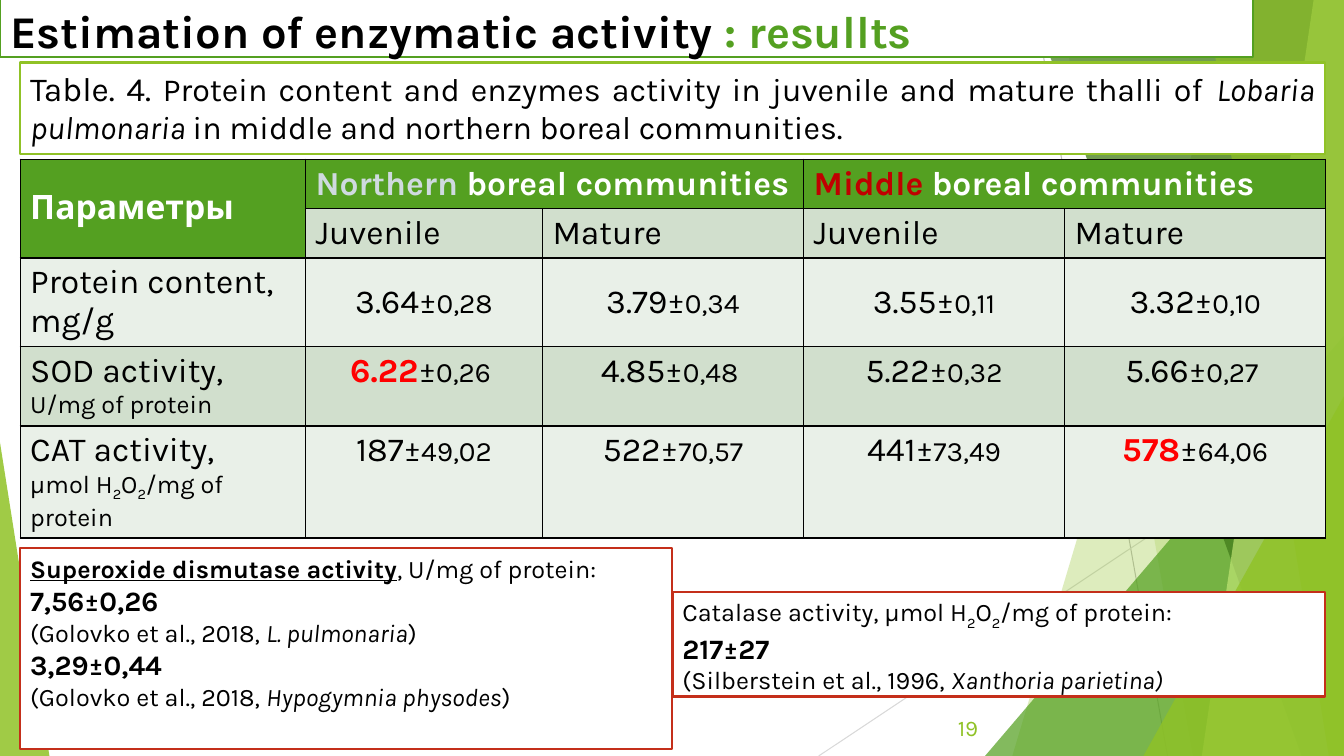
from pptx import Presentation
from pptx.dml.color import RGBColor
from pptx.enum.shapes import MSO_CONNECTOR, MSO_SHAPE
from pptx.enum.text import MSO_ANCHOR, MSO_AUTO_SIZE, PP_ALIGN
from pptx.oxml import parse_xml
from pptx.oxml.ns import nsdecls, qn
from pptx.oxml.xmlchemy import OxmlElement
from pptx.util import Inches, Pt

RECT, TRIANGLE = MSO_SHAPE.RECTANGLE, MSO_SHAPE.ISOSCELES_TRIANGLE
STRAIGHT, NO_FIT = MSO_CONNECTOR.STRAIGHT, MSO_AUTO_SIZE.NONE
TOP, MIDDLE = MSO_ANCHOR.TOP, MSO_ANCHOR.MIDDLE
LEFT, CENTER = PP_ALIGN.LEFT, PP_ALIGN.CENTER
RIGHT, JUSTIFY = PP_ALIGN.RIGHT, PP_ALIGN.JUSTIFY

BLACK, WHITE = RGBColor(0, 0, 0), RGBColor(255, 255, 255)
LIME, GREEN = RGBColor(0x90, 0xC2, 0x26), RGBColor(0x54, 0xA0, 0x21)
DARK, PALE = RGBColor(0x3F, 0x78, 0x19), RGBColor(0xC0, 0xE4, 0x74)
SAGE, MIST = RGBColor(0xD1, 0xDF, 0xCD), RGBColor(0xE9, 0xF0, 0xE8)
RED, WINE = RGBColor(255, 0, 0), RGBColor(0xC0, 0, 0)
BRICK, STEEL = RGBColor(0xC4, 0x2F, 0x1A), RGBColor(0xCF, 0xDA, 0xDF)
GREY, SILVER = RGBColor(0xBF, 0xBF, 0xBF), RGBColor(0xD9, 0xD9, 0xD9)
FONT = "Karla"
WIDE, HIGH = 13.33, 7.5
EDGE, SPAN = 0.2, 12.94

# A run is (text, size, style letters, colour); s stands for subscript.
PEROXIDE = [("2", 18, "s"), ("O", 18), ("2", 18, "s")]
TITLE = [[("Estimation of enzymatic activity ", 32.4, "b"), (": resullts", 32.4, "b", GREEN)]]
CAPTION = [[
    ("Table. 4. ", 24),
    ("Protein content and enzymes activity in juvenile and mature thalli of ", 23),
    ("Lobaria pulmonaria ", 23, "i"),
    ("in middle and northern boreal communities.", 23),
]]
DISMUTASE = [
    [("Superoxide dismutase activity", 18, "bu"), (", U/mg of protein:", 18)],
    [("7,56±0,26", 20, "b")],
    [("(Golovko et al., 2018, ", 18), ("L. pulmonaria", 18, "i"), (")", 18)],
    [("3,29±0,44", 20, "b")],
    [("(Golovko et al., 2018, ", 18), ("Hypogymnia physodes", 18, "i"), (")", 18)],
]
CATALASE = [
    [("Catalase activity, µmol H", 18), *PEROXIDE, ("/mg of protein:", 18)],
    [("217±27", 20, "b")],
    [("(Silberstein et al., 1996, ", 18), ("Xanthoria parietina)", 18, "i")],
]
CORNER = "Параметры"
ZONES = [("Northern", STEEL), ("Middle", WINE)]
AGES = ["Juvenile", "Mature"]
LABELS = [
    [[("Protein content, mg/g", 24)]],
    [[("SOD activity,", 24)], [("U/mg of protein", 18)]],
    [[("CAT activity,", 24)], [("µmol H", 18), *PEROXIDE, ("/mg of protein", 18)]],
]
VALUES = [
    [("3.64", "0,28"), ("3.79", "0,34"), ("3.55", "0,11"), ("3.32", "0,10")],
    [("6.22", "0,26 "), ("4.85", "0,48 "), ("5.22", "0,32"), ("5.66", "0,27 ")],
    [("187", "49,02"), ("522", "70,57"), ("441", "73,49"), ("578", "64,06")],
]
PEAKS = {"6.22", "578"}
COLS = [2.83, 2.35, 2.59, 2.59, 2.59]
ROWS = [0.49, 0.49, 0.87, 0.79, 1.11]

RAYS = [((10.25, 0), (11.58, HIGH), GREY), ((WIDE, 4.03), (8.12, HIGH), SILVER)]
# Each blade runs to the right edge: top x, bottom x, colour, opacity.
# Each wedge: left, top, width, apex, colour, opacity.
FACETS = [
    ("blade", (12.28, 10.04), LIME, 30),
    ("blade", (10.5, 11.83), LIME, 20),
    ("wedge", (9.77, 3.33, 3.56, 1), GREEN, 72),
    ("blade", (10.21, 12.91), DARK, 70),
    ("blade", (13.03, 11.92), PALE, 70),
    ("blade", (11.96, 13.18), LIME, 65),
    ("wedge", (11.34, 3.93, 1.99, 1), LIME, 80),
    ("wedge", (0, 4.39, 0.49, 0), LIME, 85),
]


def write(frame, paras, align=LEFT):
    for n, runs in enumerate(paras):
        para = frame.add_paragraph() if n else frame.paragraphs[0]
        para.alignment = align
        para.font.name = FONT
        for text, size, *rest in runs:
            style, color = (rest + ["", BLACK][len(rest):])
            run = para.add_run()
            run.text = text
            font = run.font
            font.name, font.size = FONT, Pt(size)
            font.bold, font.italic = "b" in style, "i" in style
            font.underline = "u" in style
            font.color.rgb = color
            if "s" in style:
                run._r.get_or_add_rPr().set("baseline", "-25000")


def paint(shape, fill, line=None):
    shape.fill.solid()
    shape.fill.fore_color.rgb = fill
    if line is None:
        shape.line.fill.background()
    else:
        shape.line.color.rgb = line
        shape.line.width = Pt(1.5)


def place(shape, *box):
    shape.left, shape.top, shape.width, shape.height = map(Inches, box)


def panel(shapes, box, line, paras, align=LEFT):
    shape = shapes.add_shape(RECT, *map(Inches, box))
    shape.shadow.inherit = False
    paint(shape, WHITE, line)
    shape.text_frame.word_wrap = True
    shape.text_frame.vertical_anchor = TOP
    write(shape.text_frame, paras, align)


def facet(shapes, kind, spots, color, alpha):
    if kind == "blade":
        top, base = spots
        path = shapes.build_freeform(Inches(top), Inches(-0.01))
        path.add_line_segments(
            [(Inches(x), Inches(y)) for x, y in [(WIDE, -0.01), (WIDE, HIGH), (base, HIGH)]])
        shape = path.convert_to_shape()
    else:
        left, top, width, apex = spots
        shape = shapes.add_shape(TRIANGLE, *map(Inches, (left, top, width, HIGH - top)))
        shape.adjustments[0] = apex
    shape.shadow.inherit = False
    paint(shape, color)
    clear = OxmlElement("a:alpha")
    clear.set("val", str(alpha * 1000))
    next(shape.element.iter(qn("a:srgbClr"))).append(clear)


def ray(shapes, start, end, color):
    line = shapes.add_connector(STRAIGHT, *map(Inches, start + end))
    line.line.color.rgb = color
    line.line.width = Pt(0.75)
    line.element.spPr.append(OxmlElement("a:effectLst"))


def frame_cell(cell):
    """Draw a thin black border on all four sides."""
    props = cell._tc.get_or_add_tcPr()
    for n, side in enumerate(("lnL", "lnR", "lnT", "lnB")):
        props.insert(n, parse_xml(
            f'<a:{side} {nsdecls("a")} w="12700"><a:solidFill>'
            f'<a:srgbClr val="000000"/></a:solidFill></a:{side}>'))


def results(shapes):
    box = map(Inches, (EDGE, 1.58, SPAN, sum(ROWS)))
    table = shapes.add_table(len(ROWS), len(COLS), *box).table
    table.first_row = table.horz_banding = False
    for col, width in zip(table.columns, COLS):
        col.width = Inches(width)
    for row, height in zip(table.rows, ROWS):
        row.height = Inches(height)
    for r in range(len(ROWS)):
        for c in range(len(COLS)):
            cell = table.cell(r, c)
            cell.fill.solid()
            head = r == 0 or (r == 1 and c == 0)
            cell.fill.fore_color.rgb = GREEN if head else SAGE if r % 2 else MIST
            frame_cell(cell)
    corner = table.cell(0, 0)
    corner.merge(table.cell(1, 0))
    corner.vertical_anchor = MIDDLE
    write(corner.text_frame, [[(CORNER, 24, "b", WHITE)]], JUSTIFY)
    for z, (zone, color) in enumerate(ZONES):
        c = 1 + z * len(AGES)
        table.cell(0, c).merge(table.cell(0, c + 1))
        write(table.cell(0, c).text_frame,
              [[(zone, 24, "b", color), (" boreal communities", 24, "b", WHITE)]])
        for a, age in enumerate(AGES):
            write(table.cell(1, c + a).text_frame, [[(age, 24)]])
    for r, (label, row) in enumerate(zip(LABELS, VALUES), 2):
        write(table.cell(r, 0).text_frame, label)
        for c, (mean, error) in enumerate(row, 1):
            cell = table.cell(r, c)
            cell.vertical_anchor = MIDDLE if r == 2 else TOP
            look = ("b", RED) if mean in PEAKS else ()
            write(cell.text_frame, [[(mean, 24, *look), ("±", 24), (error, 20)]], CENTER)


def main():
    deck = Presentation()
    deck.slide_width, deck.slide_height = Inches(WIDE), Inches(HIGH)
    slide = deck.slides.add_slide(deck.slide_layouts[5])
    shapes = slide.shapes
    for item in RAYS:
        ray(shapes, *item)
    for item in FACETS:
        facet(shapes, *item)
    results(shapes)
    half = SPAN / 2
    panel(shapes, (EDGE, 0.62, SPAN, 0.91), LIME, CAPTION, JUSTIFY)
    panel(shapes, (EDGE, 5.44, half, 1.99), BRICK, DISMUTASE)
    panel(shapes, (EDGE + half, 5.87, half, 1.04), BRICK, CATALASE)
    number = shapes.add_textbox(*map(Inches, (9.05, 7.02, 0.75, 0.4))).text_frame
    number.word_wrap = True
    number.vertical_anchor = MIDDLE
    write(number, [[("19", 16, "", LIME)]], RIGHT)
    title = shapes.title
    place(title, 0, -0.02, 12.43, 0.59)
    paint(title, WHITE, GREEN)
    title.text_frame.auto_size = NO_FIT
    title.text_frame.vertical_anchor = TOP
    write(title.text_frame, TITLE)
    title.element.getparent().append(title.element)
    deck.save("out.pptx")


if __name__ == "__main__":
    main()
